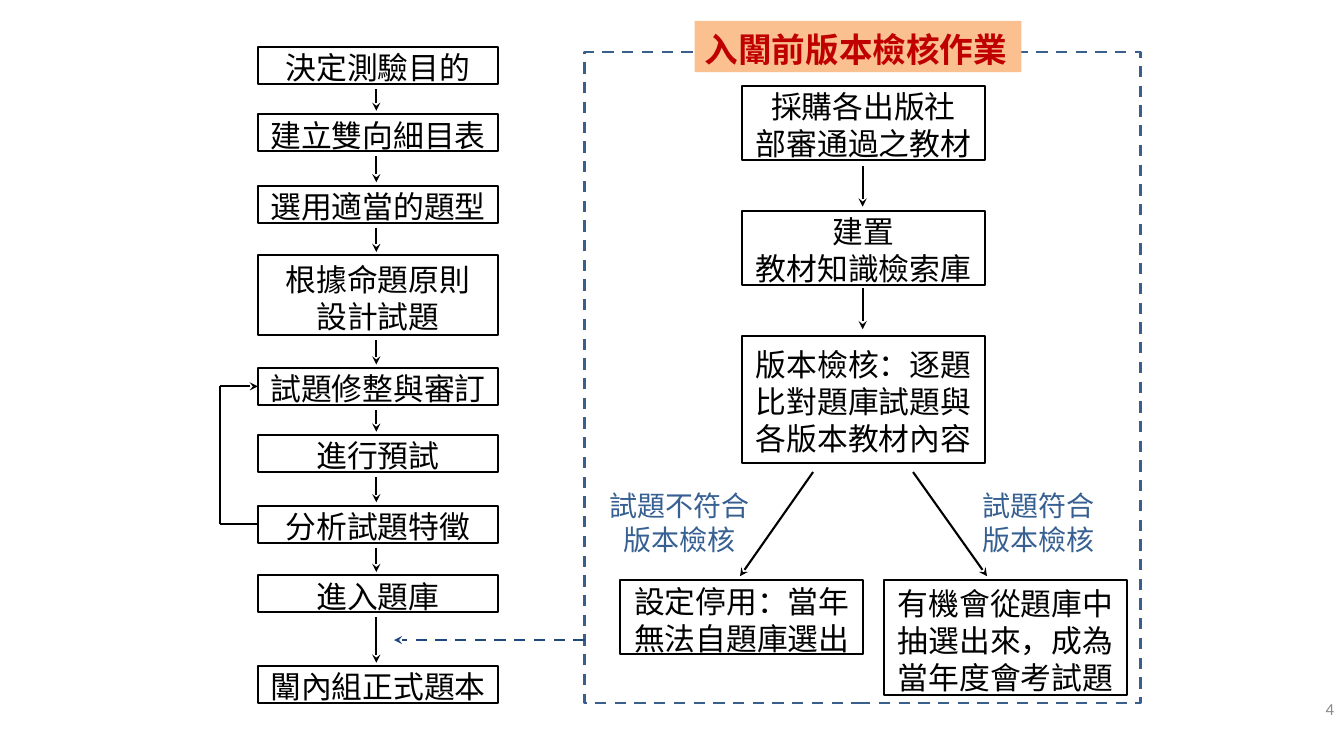
from dataclasses import dataclass

from lxml import etree
from pptx import Presentation
from pptx.dml.color import RGBColor
from pptx.enum.dml import MSO_LINE
from pptx.enum.shapes import MSO_CONNECTOR, MSO_SHAPE
from pptx.enum.text import MSO_ANCHOR, MSO_AUTO_SIZE, PP_ALIGN
from pptx.oxml.ns import qn
from pptx.util import Inches, Pt

RECTANGLE = MSO_SHAPE.RECTANGLE
STRAIGHT = MSO_CONNECTOR.STRAIGHT
DASH = MSO_LINE.DASH
MIDDLE = MSO_ANCHOR.MIDDLE
CENTER, LEFT, RIGHT = PP_ALIGN.CENTER, PP_ALIGN.LEFT, PP_ALIGN.RIGHT
TITLE_ONLY = 5

# The page is a grid of 160 columns by 90 rows of square cells
CELL = Inches(13.333) / 160
BLACK, LABEL_BLUE, FRAME_BLUE, LINK_BLUE = "000000", "376092", "3A5F8C", "1F497D"
HEADING_RED, HEADING_FILL, NUMBER_GREY = "C00000", "FAC090", "898989"
CJK_FONT, LATIN_FONT = "Noto Sans CJK SC", "Calibri"


@dataclass(frozen=True)
class Block:
    text: str
    column: float
    row: float
    columns: float
    rows: float

    @property
    def bottom(self) -> float:
        return self.row + self.rows

    @property
    def middle(self) -> float:
        return self.row + self.rows / 2


@dataclass(frozen=True)
class Link:
    start: tuple[float, float]
    end: tuple[float, float]
    arrow: bool = True
    color: str = BLACK
    width: float = 1.5
    dashed: bool = False


def cells(count: float) -> int:
    return round(count * CELL)


def paint(target, color: str) -> None:
    target.rgb = RGBColor.from_string(color)


def bounds(block: Block) -> tuple[int, ...]:
    return tuple(cells(n) for n in (block.column, block.row, block.columns, block.rows))


def write(box, text: str, size: float, color: str, align=CENTER,
          font: str = CJK_FONT, bold: bool = False) -> None:
    frame = box.text_frame
    frame.text = text
    frame.word_wrap = True
    frame.auto_size = MSO_AUTO_SIZE.NONE
    frame.vertical_anchor = MIDDLE
    frame.margin_left = frame.margin_right = Inches(0.1)
    frame.margin_top, frame.margin_bottom = Inches(0.04), 0
    for para in frame.paragraphs:
        para.alignment = align
        para.line_spacing = Pt(size * 1.2)
        para.font.size = Pt(size)
        para.font.bold = bold
        para.font.name = font
        paint(para.font.color, color)
        east_asian = etree.SubElement(para.font._element, qn("a:ea"))
        east_asian.set("typeface", font)


def add_outline(page, block: Block, color: str, width: float):
    box = page.shapes.add_shape(RECTANGLE, *bounds(block))
    box.shadow.inherit = False
    box.fill.background()
    paint(box.line.color, color)
    box.line.width = Pt(width)
    return box


def add_step(page, block: Block) -> None:
    write(add_outline(page, block, BLACK, 1.5), block.text, 22, BLACK)


def add_label(page, block: Block, size: float, color: str, align=CENTER,
              font: str = CJK_FONT) -> None:
    write(page.shapes.add_textbox(*bounds(block)), block.text, size, color, align, font)


def add_link(page, link: Link) -> None:
    line = page.shapes.add_connector(
        STRAIGHT, *(cells(n) for n in (*link.start, *link.end)))
    paint(line.line.color, link.color)
    line.line.width = Pt(link.width)
    if link.dashed:
        line.line.dash_style = DASH
    if link.arrow:
        tail = etree.SubElement(line.line._get_or_add_ln(), qn("a:tailEnd"))
        tail.set("type", "stealth")
    etree.SubElement(line._element.spPr, qn("a:effectLst"))


def add_heading(page, block: Block) -> None:
    title = page.shapes.title
    title.left, title.top, title.width, title.height = bounds(block)
    title.fill.solid()
    paint(title.fill.fore_color, HEADING_FILL)
    write(title, block.text, 24, HEADING_RED, LEFT, bold=True)
    page.shapes._spTree.append(title._element)  # bring in front of the frame


# Test development flow
STEP_LEFT, STEP_WIDTH, STEP_HEIGHT, STEP_AXIS, LOOP_COLUMN = 30.7, 28.6, 4.4, 44.8, 26.2
STEPS = [Block(text, STEP_LEFT, row, STEP_WIDTH, rows) for text, row, rows in (
    ("決定測驗目的", 5.6, STEP_HEIGHT),
    ("建立雙向細目表", 13.6, STEP_HEIGHT),
    ("選用適當的題型", 22.1, STEP_HEIGHT),
    ("根據命題原則\n設計試題", 30.4, 9.5),
    ("試題修整與審訂", 43.8, STEP_HEIGHT),
    ("進行預試", 51.8, STEP_HEIGHT),
    ("分析試題特徵", 60.2, STEP_HEIGHT),
    ("進入題庫", 68.5, STEP_HEIGHT),
    ("闈內組正式題本", 79.3, STEP_HEIGHT),
)]
REVIEW, ANALYSIS = STEPS[4].middle, STEPS[6].middle
STEP_LINKS = [Link((STEP_AXIS, upper.bottom + 0.6), (STEP_AXIS, lower.row - 0.4))
              for upper, lower in zip(STEPS, STEPS[1:])]
LOOP_LINKS = [
    Link((STEP_LEFT, ANALYSIS), (LOOP_COLUMN, ANALYSIS), arrow=False),
    Link((LOOP_COLUMN, ANALYSIS), (LOOP_COLUMN, REVIEW), arrow=False),
    Link((LOOP_COLUMN, REVIEW), (STEP_LEFT, REVIEW)),
]

# Version check flow
CHECK_LEFT, CHECK_WIDTH, CHECK_AXIS = 88.3, 29, 102.7
CHECKS = [Block(text, column, row, CHECK_WIDTH, rows) for text, column, row, rows in (
    ("採購各出版社\n部審通過之教材", CHECK_LEFT, 10.2, 8.8),
    ("建置\n教材知識檢索庫", CHECK_LEFT, 25.1, 8.8),
    ("版本檢核：逐題比對題庫試題與各版本教材內容", CHECK_LEFT, 40, 15.1),
    ("設定停用：當年無法自題庫選出", 73.8, 69.1, 8.8),
    ("有機會從題庫中抽選出來，成為當年度會考試題", 105.2, 69.1, 13.7),
)]
CHECK_LINKS = [
    Link((CHECK_AXIS, 19.8), (CHECK_AXIS, 24.6)),
    Link((CHECK_AXIS, 34.3), (CHECK_AXIS, 39.2)),
    Link((96.8, 56.2), (88.1, 68.6)),
    Link((108.7, 56.2), (117.5, 68.6)),
]
OUTCOMES = [Block(text, column, 57.5, 22.6, 8.8) for text, column in (
    ("試題不符合\n版本檢核", 69.6), ("試題符合\n版本檢核", 112.3))]

# Frame, heading and page number
FRAME = Block("", 69.6, 6.2, 66.2, 77.5)
FRAME_LINK = Link((FRAME.column, 76.2), (46.9, 76.2), color=LINK_BLUE, width=2, dashed=True)
HEADING = Block("入闈前版本檢核作業", 82.7, 2.5, 38.9, 6.1)
PAGE_NUMBER = Block("4", 122.9, 81.8, 37.1, 4.8)


def main() -> None:
    deck = Presentation()
    deck.slide_width, deck.slide_height = cells(160), cells(90)
    page = deck.slides.add_slide(deck.slide_layouts[TITLE_ONLY])
    for block in STEPS + CHECKS:
        add_step(page, block)
    for link in STEP_LINKS + LOOP_LINKS + CHECK_LINKS:
        add_link(page, link)
    for outcome in OUTCOMES:
        add_label(page, outcome, 20, LABEL_BLUE)
    add_outline(page, FRAME, FRAME_BLUE, 2).line.dash_style = DASH
    add_heading(page, HEADING)
    add_link(page, FRAME_LINK)
    add_label(page, PAGE_NUMBER, 12, NUMBER_GREY, RIGHT, LATIN_FONT)
    deck.save("out.pptx")


if __name__ == "__main__":
    main()
